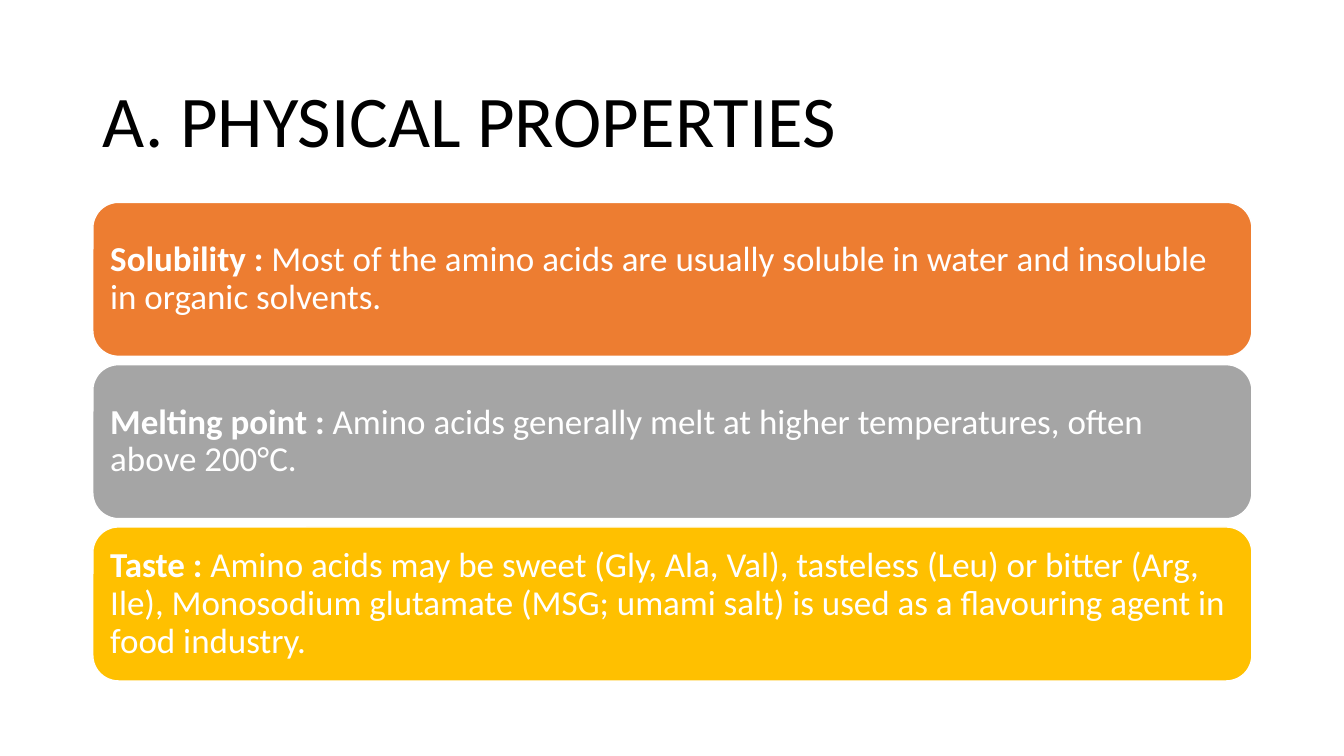
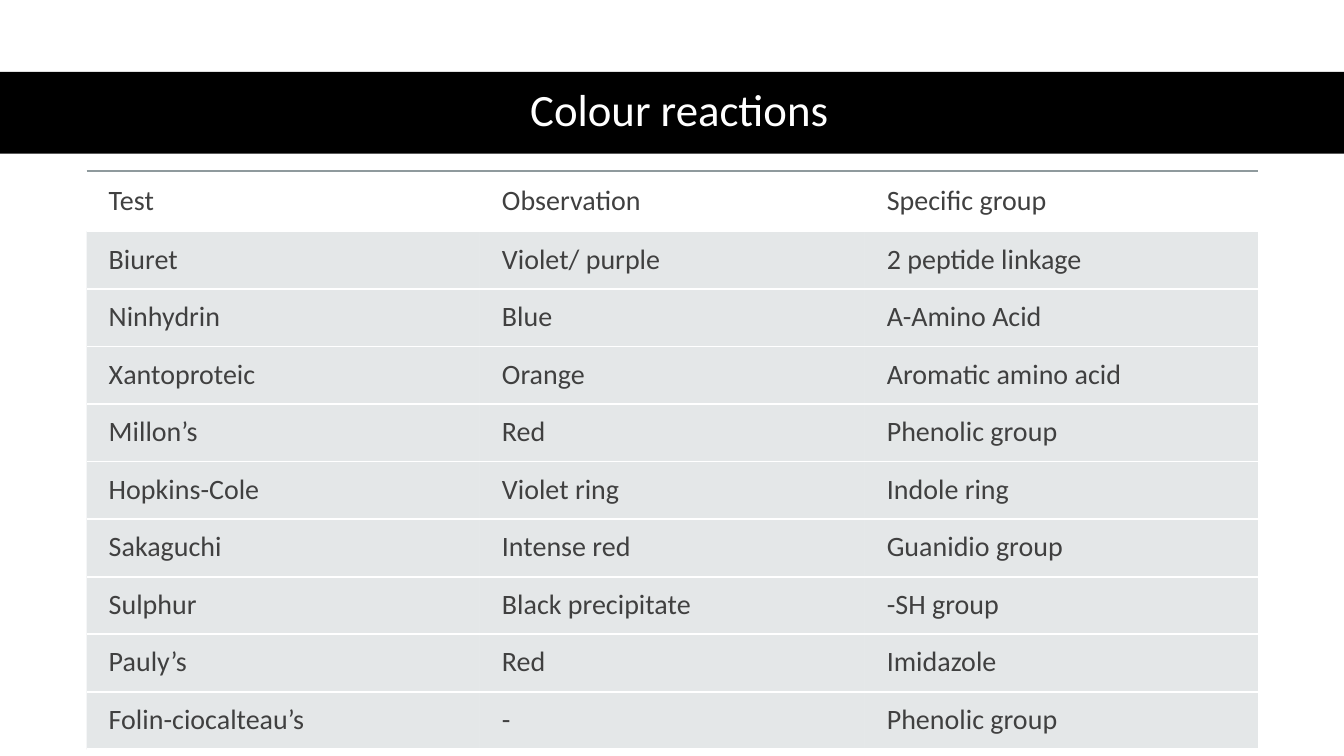
"""Build two slides on the physical properties and colour reactions of amino acids."""

import dataclasses
import typing

import lxml.etree
import pptx
import pptx.dml.color
import pptx.enum.shapes
import pptx.enum.text
import pptx.oxml.ns
import pptx.slide
import pptx.table
import pptx.text.text
import pptx.util

Cm = pptx.util.Cm
Pt = pptx.util.Pt
RGB = pptx.dml.color.RGBColor
qn = pptx.oxml.ns.qn


@dataclasses.dataclass(frozen=True)
class Theme:
    font: str = "Calibri"
    white: str = "FFFFFF"
    black: str = "000000"
    orange: str = "ED7D31"
    grey: str = "A5A5A5"
    gold: str = "FFC000"
    table_text: str = "404040"
    table_fill: str = "B4BCBE"
    table_rule: str = "8F9A9D"
    fill_opacity: int = 35
    rule_opacity: int = 60
    rule_width: float = 1.5
    heading_size: int = 52
    band_size: int = 32
    property_size: int = 25
    table_size: int = 20
    line_spacing: float = 0.9


class Area(typing.NamedTuple):
    left: float
    top: float
    width: float
    height: float


class Property(typing.NamedTuple):
    label: str
    description: str
    color: str


class Heading(typing.NamedTuple):
    text: str
    area: Area
    size: int
    color: str
    alignment: pptx.enum.text.PP_ALIGN


class Rule(typing.NamedTuple):
    color: str
    opacity: int = 100


THEME = Theme()
ALIGN = pptx.enum.text.PP_ALIGN
SHAPES = pptx.enum.shapes.MSO_SHAPE
TITLE_ONLY = 5
SLIDE_WIDTH, SLIDE_HEIGHT = 33.87, 19.05

PROPERTIES_HEADING = Heading(
    "A. PHYSICAL PROPERTIES", Area(2.34, 1.55, 29.21, 3.15),
    THEME.heading_size, THEME.black, ALIGN.LEFT,
)
REACTIONS_HEADING = Heading(
    "Colour reactions", Area(1.55, 1.78, 31.14, 2.06),
    THEME.band_size, THEME.white, ALIGN.CENTER,
)
REACTIONS_BAND = Area(0, 1.81, SLIDE_WIDTH, 2.06)

FIRST_CARD = Area(2.34, 5.1, 29.21, 3.88)
CARD_GAP = 0.21
PROPERTIES = (
    Property(
        "Solubility : ",
        "Most of the amino acids are usually soluble in water and insoluble in organic solvents.",
        THEME.orange,
    ),
    Property(
        "Melting point : ",
        "Amino acids generally melt at higher temperatures, often above 200°C.",
        THEME.grey,
    ),
    Property(
        "Taste : ",
        "Amino acids may be sweet (Gly, Ala, Val), tasteless (Leu) or bitter (Arg, Ile), "
        "Monosodium glutamate (MSG; umami salt) is used as a flavouring agent in food industry.",
        THEME.gold,
    ),
)

TABLE_LEFT, TABLE_TOP = 2.18, 4.3
COLUMN_WIDTHS = (9.91, 9.7, 9.91)
HEADER_HEIGHT, ROW_HEIGHT = 1.53, 1.45
TEXT_INDENT, HEADER_MARGIN, ROW_MARGIN = 0.56, 0.33, 0.28
REACTIONS = (
    ("Test", "Observation", "Specific group"),
    ("Biuret", "Violet/ purple", "2 peptide linkage"),
    ("Ninhydrin", "Blue", "Α-Amino Acid"),
    ("Xantoproteic", "Orange", "Aromatic amino acid"),
    ("Millon’s", "Red", "Phenolic group"),
    ("Hopkins-Cole", "Violet ring", "Indole ring"),
    ("Sakaguchi", "Intense red", "Guanidio group"),
    ("Sulphur", "Black precipitate", "-SH group"),
    ("Pauly’s", "Red", "Imidazole"),
    ("Folin-ciocalteau’s", "-", "Phenolic group"),
)


def apply(target: typing.Any, formats: dict[str, typing.Any]) -> None:
    for attribute, value in formats.items():
        setattr(target, attribute, value)


def lengths(area: Area) -> dict[str, pptx.util.Length]:
    return {side: Cm(value) for side, value in area._asdict().items()}


def margins(left: float, others: float) -> dict[str, pptx.util.Length]:
    sides = {"left": left, "right": others, "top": others, "bottom": others}
    return {f"margin_{side}": Cm(value) for side, value in sides.items()}


def style_font(font: pptx.text.text.Font, size: int, color: str, bold: bool = False) -> None:
    apply(font, {"name": THEME.font, "size": Pt(size), "bold": bold})
    font.color.rgb = RGB.from_string(color)


def add_heading(slide: pptx.slide.Slide, heading: Heading) -> None:
    title = slide.shapes.title
    apply(title, lengths(heading.area))
    apply(title.text_frame, {
        "text": heading.text,
        "word_wrap": True,
        "auto_size": pptx.enum.text.MSO_AUTO_SIZE.NONE,
        "vertical_anchor": pptx.enum.text.MSO_ANCHOR.MIDDLE,
    })
    line = title.text_frame.paragraphs[0]
    apply(line, {"alignment": heading.alignment, "line_spacing": THEME.line_spacing})
    style_font(line.runs[0].font, heading.size, heading.color)


def add_band(slide: pptx.slide.Slide, area: Area) -> None:
    band = slide.shapes.add_shape(SHAPES.RECTANGLE, **lengths(area))
    band.shadow.inherit = False
    band.fill.solid()
    band.fill.fore_color.rgb = RGB.from_string(THEME.black)
    band.line.fill.background()
    slide.shapes.title.element.addprevious(band.element)


def add_card(slide: pptx.slide.Slide, area: Area, content: Property) -> None:
    card = slide.shapes.add_shape(SHAPES.ROUNDED_RECTANGLE, **lengths(area))
    card.shadow.inherit = False
    card.fill.solid()
    card.fill.fore_color.rgb = RGB.from_string(content.color)
    card.line.color.rgb = RGB.from_string(THEME.white)
    card.line.width = Pt(1)
    apply(card.text_frame, margins(0.25, 0.25) | {
        "word_wrap": True,
        "vertical_anchor": pptx.enum.text.MSO_ANCHOR.MIDDLE,
    })
    sentence = card.text_frame.paragraphs[0]
    apply(sentence, {"alignment": ALIGN.LEFT, "line_spacing": THEME.line_spacing})
    for words, bold in ((content.label, True), (content.description, False)):
        run = sentence.add_run()
        run.text = words
        style_font(run.font, THEME.property_size, THEME.white, bold)


def set_opacity(solid_fill: lxml.etree._Element, percent: int) -> None:
    lxml.etree.SubElement(solid_fill[0], qn("a:alpha"), val=str(percent * 1000))


def set_borders(cell: pptx.table._Cell, top: Rule) -> None:
    properties = cell._tc.get_or_add_tcPr()
    rules = {"lnL": None, "lnR": None, "lnT": top, "lnB": Rule(THEME.white)}
    for position, (side, rule) in enumerate(rules.items()):
        border = lxml.etree.Element(qn(f"a:{side}"), w=str(Pt(THEME.rule_width)))
        if rule is None:
            lxml.etree.SubElement(border, qn("a:noFill"))
        else:
            paint = lxml.etree.SubElement(border, qn("a:solidFill"))
            lxml.etree.SubElement(paint, qn("a:srgbClr"), val=rule.color)
            set_opacity(paint, rule.opacity)
        properties.insert(position, border)


def fill_cell(cell: pptx.table._Cell, text: str, is_header: bool) -> None:
    apply(cell, margins(TEXT_INDENT, HEADER_MARGIN if is_header else ROW_MARGIN))
    cell.text = text
    style_font(cell.text_frame.paragraphs[0].runs[0].font, THEME.table_size, THEME.table_text)
    if is_header:
        cell.fill.background()
        set_borders(cell, Rule(THEME.table_rule, THEME.rule_opacity))
    else:
        cell.fill.solid()
        cell.fill.fore_color.rgb = RGB.from_string(THEME.table_fill)
        set_opacity(cell._tc.tcPr.find(qn("a:solidFill")), THEME.fill_opacity)
        set_borders(cell, Rule(THEME.white))


def add_reactions(slide: pptx.slide.Slide) -> None:
    height = HEADER_HEIGHT + ROW_HEIGHT * (len(REACTIONS) - 1)
    area = Area(TABLE_LEFT, TABLE_TOP, sum(COLUMN_WIDTHS), height)
    reactions = slide.shapes.add_table(
        len(REACTIONS), len(COLUMN_WIDTHS), **lengths(area)
    ).table
    apply(reactions, {"first_row": False, "horz_banding": False})
    for column, width in zip(reactions.columns, COLUMN_WIDTHS):
        column.width = Cm(width)
    for index, (row, texts) in enumerate(zip(reactions.rows, REACTIONS)):
        is_header = index == 0
        row.height = Cm(HEADER_HEIGHT if is_header else ROW_HEIGHT)
        for cell, text in zip(row.cells, texts):
            fill_cell(cell, text, is_header)


def add_slide(deck: typing.Any, heading: Heading) -> pptx.slide.Slide:
    slide = deck.slides.add_slide(deck.slide_layouts[TITLE_ONLY])
    add_heading(slide, heading)
    return slide


def main() -> None:
    deck = pptx.Presentation()
    apply(deck, {"slide_width": Cm(SLIDE_WIDTH), "slide_height": Cm(SLIDE_HEIGHT)})

    physical = add_slide(deck, PROPERTIES_HEADING)
    for index, content in enumerate(PROPERTIES):
        top = FIRST_CARD.top + index * (FIRST_CARD.height + CARD_GAP)
        add_card(physical, FIRST_CARD._replace(top=top), content)

    colour = add_slide(deck, REACTIONS_HEADING)
    add_band(colour, REACTIONS_BAND)
    add_reactions(colour)

    deck.save("out.pptx")


if __name__ == "__main__":
    main()
